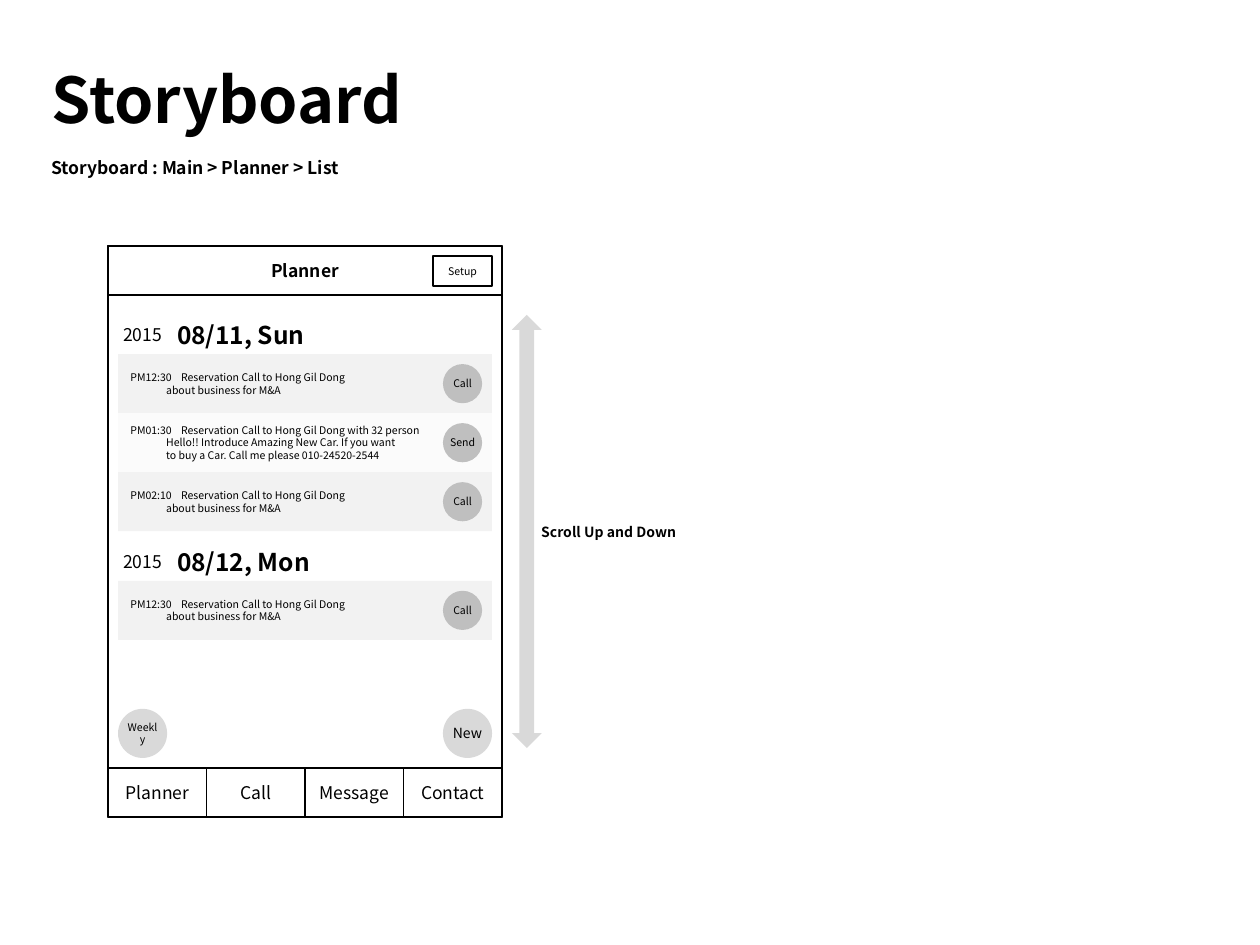
import pptx
import pptx.dml.color
import pptx.enum.shapes
import pptx.enum.text
import pptx.oxml
import pptx.util
from pptx.oxml import ns

Cm = pptx.util.Cm
SHAPE = pptx.enum.shapes.MSO_SHAPE
ALIGN = pptx.enum.text.PP_ALIGN
COLORS = {"ink": "000000", "row": "F2F2F2", "row_alt": "FBFBFB",
          "button": "BFBFBF", "round": "D9D9D9"}
FONT = "Noto Sans CJK KR"


def write(sp, text, size=10, bold=False, align=ALIGN.CENTER, inset=None, tab=None, hang=0):
    tf = sp.text_frame
    tf.word_wrap = True
    tf.auto_size = pptx.enum.text.MSO_AUTO_SIZE.NONE
    tf.vertical_anchor = pptx.enum.text.MSO_ANCHOR.MIDDLE
    if inset is not None:
        tf.margin_left = tf.margin_right = tf.margin_top = tf.margin_bottom = Cm(inset)
    for i, line in enumerate(text.split("\n")):
        p = tf.add_paragraph() if i else tf.paragraphs[0]
        p.alignment = align
        r = p.add_run()
        r.text = line
        r.font.name = FONT
        r.font.size = pptx.util.Pt(size)
        r.font.bold = bold
        r.font.color.rgb = pptx.dml.color.RGBColor.from_string(COLORS["ink"])
        pPr = p._p.get_or_add_pPr()
        if i and hang:
            pPr.set("marL", str(Cm(hang)))
            pPr.set("indent", "0")
        elif tab:
            pPr.append(pptx.oxml.parse_xml(
                f'<a:tabLst {ns.nsdecls("a")}><a:tab pos="{Cm(tab)}" algn="l"/></a:tabLst>'))


def add_box(kind, x, y, w, h, fill=None, line=None):
    sp = slide.shapes.add_shape(kind, Cm(x), Cm(y), Cm(w), Cm(h))
    sp.shadow.inherit = False
    if fill:
        sp.fill.solid()
        sp.fill.fore_color.rgb = pptx.dml.color.RGBColor.from_string(COLORS[fill])
    else:
        sp.fill.background()
    if line:
        sp.line.color.rgb = pptx.dml.color.RGBColor.from_string(COLORS[line])
        sp.line.width = pptx.util.Pt(1)
    else:
        sp.line.fill.background()
    return sp


prs = pptx.Presentation()
prs.slide_width, prs.slide_height = Cm(25.4), Cm(19.05)
slide = prs.slides.add_slide(prs.slide_layouts[5])

title = slide.shapes.title
title.left, title.top, title.width, title.height = Cm(0.79), Cm(0.79), Cm(18.47), Cm(2.39)
write(title, "Storyboard", size=36, bold=True, align=ALIGN.LEFT)
sp = slide.shapes.add_textbox(Cm(0.79), Cm(2.98), Cm(18.47), Cm(0.79))
write(sp, "Storyboard : Main > Planner > List", bold=True, align=ALIGN.LEFT)

phone_x, phone_y, phone_w, phone_h = 2.18, 4.96, 7.94, 11.51
bar_h = 0.99
add_box(SHAPE.RECTANGLE, phone_x, phone_y, phone_w, phone_h, line="ink")
sp = add_box(SHAPE.RECTANGLE, phone_x, phone_y, phone_w, bar_h, line="ink")
write(sp, "Planner", bold=True)
sp = add_box(SHAPE.RECTANGLE, 8.73, 5.16, 1.19, 0.6, line="ink")
write(sp, "Setup", size=6)

tabs = ["Planner", "Call", "Message", "Contact"]
tab_w = phone_w / len(tabs)
for i, name in enumerate(tabs):
    sp = add_box(SHAPE.RECTANGLE, phone_x + i * tab_w, phone_y + phone_h - bar_h,
                 tab_w, bar_h, line="ink")
    write(sp, name)

for x, name, size in [(2.38, "Weekly", 6), (8.93, "New", 8)]:
    sp = add_box(SHAPE.OVAL, x, 14.29, 0.99, 0.99, fill="round")
    write(sp, name, size=size, inset=0)

call = "Reservation Call to Hong Gil Dong"
about = "about business for M&A"
offer = ("Hello!! Introduce Amazing New Car. If you want\n"
         "to buy a Car. Call me please 010-24520-2544")
days = [
    (6.35, "08/11, Sun", [
        (f"PM12:30\t{call}\n{about}", "Call"),
        (f"PM01:30\t{call} with 32 person\n{offer}", "Send"),
        (f"PM02:10\t{call}\n{about}", "Call")]),
    (10.92, "08/12, Mon", [(f"PM12:30\t{call}\n{about}", "Call")]),
]
head_h, row_h, button_d = 0.79, 1.19, 0.79
for day_y, date, rows in days:
    sp = slide.shapes.add_textbox(Cm(2.38), Cm(day_y), Cm(0.99), Cm(head_h))
    write(sp, "2015", inset=0)
    sp = slide.shapes.add_textbox(Cm(3.57), Cm(day_y), Cm(4.76), Cm(head_h))
    write(sp, date, size=14, bold=True, align=ALIGN.LEFT, inset=0)
    for i, (text, action) in enumerate(rows):
        y = day_y + head_h + i * row_h
        sp = add_box(SHAPE.RECTANGLE, 2.38, y, 7.54, row_h, fill="row_alt" if i % 2 else "row")
        write(sp, text, size=6, align=ALIGN.LEFT, tab=1.02, hang=0.72)
        sp = add_box(SHAPE.OVAL, 8.93, y + (row_h - button_d) / 2, button_d, button_d,
                     fill="button")
        write(sp, action, size=6, inset=0)

add_box(SHAPE.UP_DOWN_ARROW, 10.32, 6.35, 0.6, 8.73, fill="round")
sp = slide.shapes.add_textbox(Cm(10.91), Cm(10.32), Cm(3.97), Cm(0.79))
write(sp, "Scroll Up and Down", size=8, bold=True, align=ALIGN.LEFT, inset=0)

prs.save("out.pptx")
